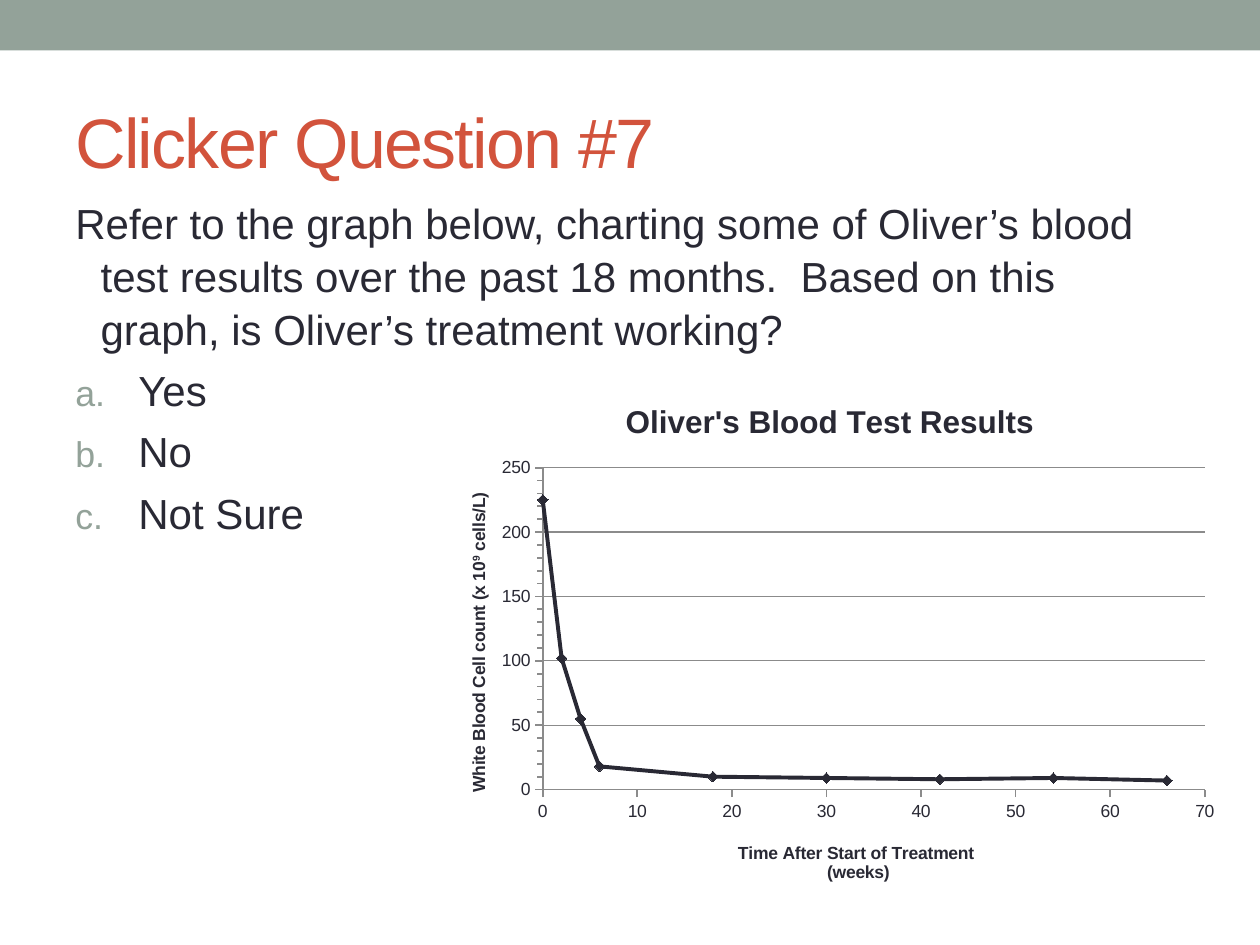
from dataclasses import dataclass

from lxml.etree import SubElement
from pptx import Presentation
from pptx.chart.data import XyChartData
from pptx.dml.color import RGBColor
from pptx.enum.chart import XL_CHART_TYPE, XL_MARKER_STYLE, XL_TICK_MARK
from pptx.enum.shapes import MSO_SHAPE
from pptx.enum.text import MSO_ANCHOR
from pptx.oxml import parse_xml
from pptx.oxml.ns import nsdecls, qn
from pptx.util import Cm, Pt


@dataclass(frozen=True)
class Theme:
    font: str = "Arial"
    band: RGBColor = RGBColor(0x93, 0xA2, 0x99)
    accent: RGBColor = RGBColor(0xD2, 0x53, 0x3C)
    ink: RGBColor = RGBColor(0x29, 0x29, 0x34)
    grid: RGBColor = RGBColor(0x8B, 0x8B, 0x8B)
    title_size: Pt = Pt(40)
    body_size: Pt = Pt(24)
    chart_title_size: Pt = Pt(18)
    chart_size: Pt = Pt(10)


def apply(target, values):
    for name, value in values.items():
        setattr(target, name, value)


def place(element, before, **fractions):
    for old in element.findall(qn("c:layout")):
        element.remove(old)
    modes = "".join(f'<c:{axis}Mode val="edge"/>' for axis in "xy")
    numbers = "".join(f'<c:{key} val="{value}"/>' for key, value in fractions.items())
    target = '<c:layoutTarget val="inner"/>' if "w" in fractions else ""
    layout = parse_xml(
        f'<c:layout {nsdecls("c")}><c:manualLayout>{target}{modes}{numbers}'
        "</c:manualLayout></c:layout>"
    )
    if before is None:
        element.insert(0, layout)
    else:
        element.find(qn(before)).addnext(layout)


class SlideBuilder:
    def __init__(self, slide, theme):
        self.slide = slide
        self.theme = theme

    def style(self, font, size, color=None, bold=False):
        apply(font, {"name": self.theme.font, "size": size, "bold": bold})
        font.color.rgb = color or self.theme.ink

    def band(self, *box):
        shape = self.slide.shapes.add_shape(MSO_SHAPE.RECTANGLE, *box)
        shape.shadow.inherit = False
        shape.fill.solid()
        shape.fill.fore_color.rgb = self.theme.band
        shape.line.fill.background()

    def text_box(self, *box, anchor=MSO_ANCHOR.TOP):
        frame = self.slide.shapes.add_textbox(*box).text_frame
        apply(frame, {"word_wrap": True, "vertical_anchor": anchor})
        return frame

    def title(self, text, *box):
        frame = self.text_box(*box, anchor=MSO_ANCHOR.MIDDLE)
        run = frame.paragraphs[0].add_run()
        run.text = text
        self.style(run.font, self.theme.title_size, self.theme.accent)
        run.font._element.set("spc", "-100")

    def question(self, text, answers, *box):
        frame = self.text_box(*box)
        self.body_line(frame.paragraphs[0], text, Cm(0.51))
        for answer in answers:
            paragraph = frame.add_paragraph()
            self.body_line(paragraph, answer, Cm(1.27))
            self.letter(paragraph)

    def body_line(self, paragraph, text, indent):
        run = paragraph.add_run()
        run.text = text
        self.style(run.font, self.theme.body_size)
        apply(paragraph, {"space_before": Pt(4.8), "line_spacing": 1.05})
        properties = paragraph._p.get_or_add_pPr()
        properties.set("marL", str(indent))
        properties.set("indent", str(-indent))

    def letter(self, paragraph):
        properties = paragraph._p.get_or_add_pPr()
        color = SubElement(properties, qn("a:buClr"))
        SubElement(color, qn("a:srgbClr"), val=str(self.theme.band))
        SubElement(properties, qn("a:buSzPct"), val="85000")
        SubElement(properties, qn("a:buAutoNum"), type="alphaLcPeriod")

    def chart_heading(self, owner, lines, size):
        frame = owner.text_frame
        for index, runs in enumerate(lines):
            paragraph = frame.add_paragraph() if index else frame.paragraphs[0]
            for text, raised in runs:
                run = paragraph.add_run()
                run.text = text
                self.style(run.font, size, bold=True)
                if raised:
                    run.font._element.set("baseline", "30000")

    def axis(self, axis, heading, position, values):
        apply(axis, {"minimum_scale": 0, "major_tick_mark": XL_TICK_MARK.OUTSIDE, **values})
        self.style(axis.tick_labels.font, self.theme.chart_size)
        axis.tick_labels.number_format = "General"
        axis.tick_labels.number_format_is_linked = False
        self.line(axis.format.line, self.theme.grid, Pt(1))
        self.chart_heading(axis.axis_title, heading, self.theme.chart_size)
        place(axis.axis_title._element, "c:tx", **position)

    def line(self, line, color, width):
        line.color.rgb = color
        line.width = width

    def scatter(self, heading, points, *box):
        data = XyChartData()
        series = data.add_series("Series 1")
        for week, count in points:
            series.add_data_point(week, count)
        chart = self.slide.shapes.add_chart(XL_CHART_TYPE.XY_SCATTER_LINES, *box, data).chart
        apply(chart, {"has_legend": False, "has_title": True})
        self.style(chart.font, self.theme.chart_size)
        self.chart_heading(chart.chart_title, [[(heading, False)]], self.theme.chart_title_size)
        plot = chart.plots[0]
        plot.vary_by_categories = False
        place(plot._element.getparent(), None, x=0.14, y=0.17, w=0.83, h=0.61)
        self.curve(plot.series[0])
        return chart

    def curve(self, series):
        series.smooth = False
        self.line(series.format.line, self.theme.ink, Pt(2.25))
        apply(series.marker, {"style": XL_MARKER_STYLE.DIAMOND, "size": 6})
        series.marker.format.fill.solid()
        series.marker.format.fill.fore_color.rgb = self.theme.ink
        self.line(series.marker.format.line, self.theme.ink, Pt(0.75))


def main():
    presentation = Presentation()
    apply(presentation, {"slide_width": Cm(25.4), "slide_height": Cm(19.05)})
    slide = presentation.slides.add_slide(presentation.slide_layouts[6])
    theme = Theme()
    builder = SlideBuilder(slide, theme)

    builder.band(Cm(0), Cm(0), Cm(25.4), Cm(1.02))
    builder.title("Clicker Question #7", Cm(1.27), Cm(1.47), Cm(22.86), Cm(2.74))
    builder.question(
        "Refer to the graph below, charting some of Oliver’s blood test results "
        "over the past 18 months.  Based on this graph, is Oliver’s treatment working?",
        ["Yes", "No", "Not Sure"],
        Cm(1.27), Cm(3.81), Cm(22.86), Cm(13.54),
    )

    weeks = [0, 2, 4, 6, 18, 30, 42, 54, 66]
    counts = [225, 102, 55, 18, 10, 9, 8, 9, 7]
    chart = builder.scatter(
        "Oliver's Blood Test Results", zip(weeks, counts),
        Cm(8.69), Cm(7.62), Cm(16.08), Cm(10.64),
    )
    builder.axis(
        chart.category_axis,
        [[("Time After Start of Treatment ", False)], [("(weeks)", False)]],
        {"x": 0.38, "y": 0.87},
        {"maximum_scale": 70, "major_unit": 10, "has_major_gridlines": False},
    )
    builder.axis(
        chart.value_axis,
        [[("White Blood Cell count (x 10", False), ("9", True), (" cells/L)", False)]],
        {"x": 0.04, "y": 0.21},
        {"maximum_scale": 250, "major_unit": 50, "minor_unit": 10,
         "minor_tick_mark": XL_TICK_MARK.OUTSIDE, "has_major_gridlines": True},
    )
    builder.line(chart.value_axis.major_gridlines.format.line, theme.grid, Pt(0.75))
    presentation.save("out.pptx")


if __name__ == "__main__":
    main()
